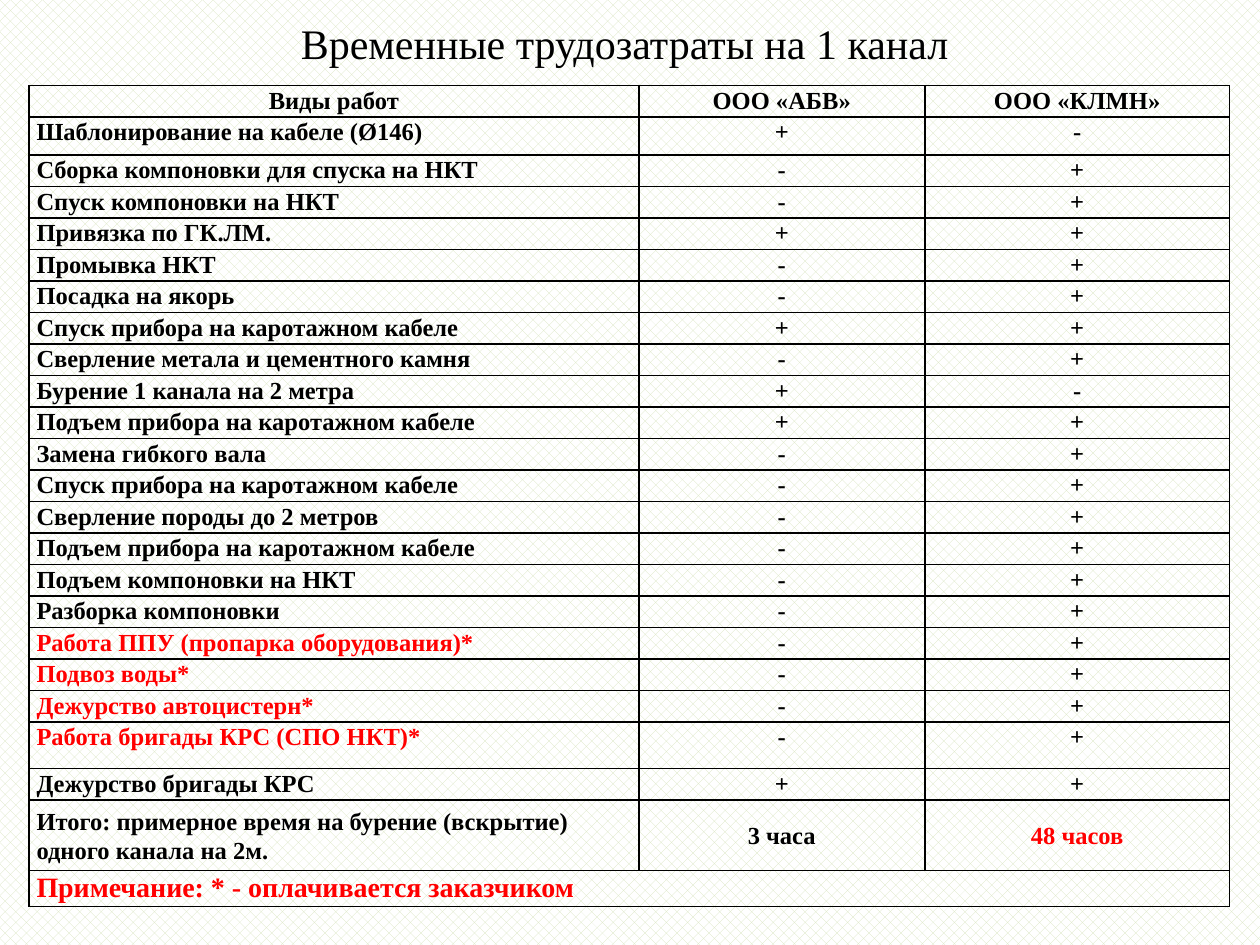
"""Build the slide comparing time spent per channel by two contractors."""
import dataclasses

import lxml.etree
import pptx
import pptx.dml.color
import pptx.enum.dml
import pptx.enum.text
import pptx.oxml.ns
import pptx.util

Inches = pptx.util.Inches
Align = pptx.enum.text.PP_ALIGN
Anchor = pptx.enum.text.MSO_ANCHOR


@dataclasses.dataclass(frozen=True)
class Theme:
    font: str = "Times New Roman"
    ink: str = "000000"
    accent: str = "FF0000"
    pattern: str = "D7E4BD"
    paper: str = "FFFFFF"
    title_size: int = 24
    body_size: int = 14
    note_size: int = 16
    border_width: int = 1
    line_spacing: float = 1.07


@dataclasses.dataclass(frozen=True)
class Work:
    name: str
    first: str
    second: str
    height: float = 0
    name_color: str = Theme.ink
    second_color: str = Theme.ink
    name_align: Align = Align.LEFT
    anchor: Anchor = Anchor.TOP
    size: int = Theme.body_size


THEME = Theme()
TABLE_HEIGHT = 6.41
COLUMN_WIDTHS = (4.84, 2.27, 2.42)
WORKS = (
    Work("Виды работ", "ООО «АБВ»", "ООО «КЛМН»", name_align=Align.CENTER),
    Work("Шаблонирование на кабеле (Ø146)", "+", "-", height=0.3),
    Work("Сборка компоновки для спуска на НКТ", "-", "+"),
    Work("Спуск компоновки на НКТ", "-", "+"),
    Work("Привязка по ГК.ЛМ.", "+", "+"),
    Work("Промывка НКТ", "-", "+"),
    Work("Посадка на якорь", "-", "+"),
    Work("Спуск прибора на каротажном кабеле", "+", "+"),
    Work("Сверление метала и цементного камня", "-", "+"),
    Work("Бурение 1 канала на 2 метра", "+", "-"),
    Work("Подъем прибора на каротажном кабеле", "+", "+"),
    Work("Замена гибкого вала", "-", "+"),
    Work("Спуск прибора на каротажном кабеле", "-", "+"),
    Work("Сверление породы до 2 метров", "-", "+"),
    Work("Подъем прибора на каротажном кабеле", "-", "+"),
    Work("Подъем компоновки на НКТ", "-", "+"),
    Work("Разборка компоновки", "-", "+"),
    Work("Работа ППУ (пропарка оборудования)*", "-", "+", name_color=THEME.accent),
    Work("Подвоз воды*", "-", "+", name_color=THEME.accent),
    Work("Дежурство автоцистерн*", "-", "+", name_color=THEME.accent),
    Work("Работа бригады КРС (СПО НКТ)*", "-", "+", height=0.37, name_color=THEME.accent),
    Work("Дежурство бригады КРС", "+", "+"),
    Work("Итого: примерное время на бурение (вскрытие) одного канала на 2м.", "3 часа",
         "48 часов", height=0.56, second_color=THEME.accent, anchor=Anchor.MIDDLE),
    Work("Примечание: * - оплачивается заказчиком", "", "", height=0.28,
         name_color=THEME.accent, size=THEME.note_size),
)


def apply(target: object, values: dict) -> None:
    for name, value in values.items():
        setattr(target, name, value)


def rgb(color: str) -> pptx.dml.color.RGBColor:
    return pptx.dml.color.RGBColor.from_string(color)


def write(para, text: str, size: int, color: str, align: Align, bold: bool) -> None:
    para.alignment = align
    span = para.add_run()
    span.text = text
    apply(span.font, {"name": THEME.font, "size": pptx.util.Pt(size), "bold": bold})
    span.font.color.rgb = rgb(color)


def add_borders(cell) -> None:
    properties = cell._tc.get_or_add_tcPr()
    for index, side in enumerate(("lnL", "lnR", "lnT", "lnB")):
        line = lxml.etree.Element(pptx.oxml.ns.qn(f"a:{side}"))
        line.set("w", str(pptx.util.Pt(THEME.border_width)))
        fill = lxml.etree.SubElement(line, pptx.oxml.ns.qn("a:solidFill"))
        lxml.etree.SubElement(fill, pptx.oxml.ns.qn("a:srgbClr")).set("val", THEME.ink)
        properties.insert(index, line)


def fill_cell(cell, work: Work, text: str, color: str, align: Align) -> None:
    apply(cell, {
        "margin_left": Inches(0.06), "margin_right": Inches(0.06),
        "margin_top": 0, "margin_bottom": 0, "vertical_anchor": work.anchor,
    })
    cell.fill.background()
    add_borders(cell)
    if text:
        para = cell.text_frame.paragraphs[0]
        para.line_spacing = THEME.line_spacing
        write(para, text, work.size, color, align, True)


def add_title(page) -> None:
    box = page.shapes.add_textbox(Inches(0.5), 0, Inches(9), Inches(0.68))
    apply(box.text_frame, {"word_wrap": True, "vertical_anchor": Anchor.MIDDLE})
    write(box.text_frame.paragraphs[0], "Временные трудозатраты на 1 канал ",
          THEME.title_size, THEME.ink, Align.CENTER, False)


def add_works(page) -> None:
    table = page.shapes.add_table(
        len(WORKS), len(COLUMN_WIDTHS), Inches(0.23), Inches(0.68),
        Inches(sum(COLUMN_WIDTHS)), Inches(TABLE_HEIGHT)).table
    apply(table, {"first_row": False, "horz_banding": False})
    for column, width in zip(table.columns, COLUMN_WIDTHS):
        column.width = Inches(width)
    plain_count = sum(not work.height for work in WORKS)
    plain_height = (TABLE_HEIGHT - sum(work.height for work in WORKS)) / plain_count
    for row, work in zip(table.rows, WORKS):
        row.height = Inches(work.height or plain_height)
        name, first, second = row.cells
        fill_cell(name, work, work.name, work.name_color, work.name_align)
        fill_cell(first, work, work.first, THEME.ink, Align.CENTER)
        fill_cell(second, work, work.second, work.second_color, Align.CENTER)
    last = len(WORKS) - 1
    table.cell(last, 0).merge(table.cell(last, len(COLUMN_WIDTHS) - 1))


def main() -> None:
    deck = pptx.Presentation()
    apply(deck, {"slide_width": Inches(10), "slide_height": Inches(7.5)})
    page = deck.slides.add_slide(deck.slide_layouts[6])
    fill = page.background.fill
    fill.patterned()
    fill.pattern = pptx.enum.dml.MSO_PATTERN.from_xml("pct40")
    fill.fore_color.rgb = rgb(THEME.pattern)
    fill.back_color.rgb = rgb(THEME.paper)
    add_title(page)
    add_works(page)
    deck.save("out.pptx")


if __name__ == "__main__":
    main()
